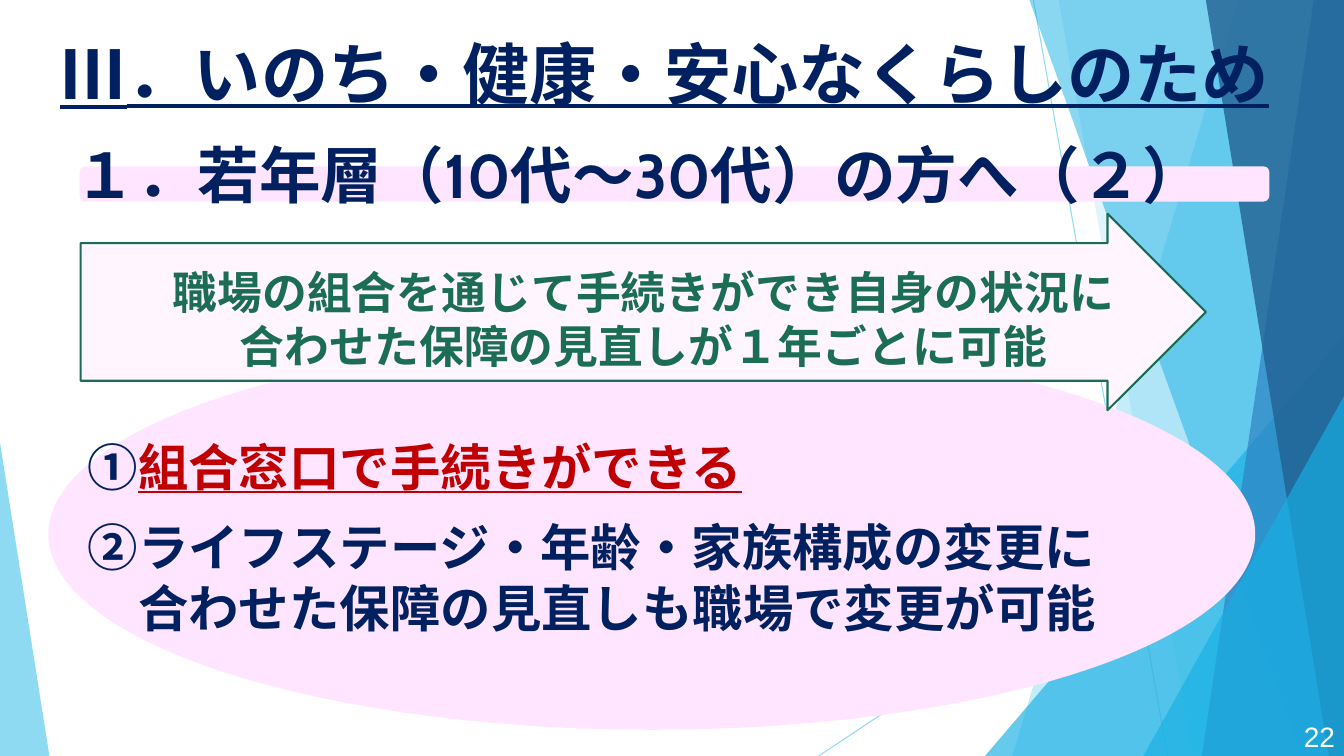
"""Builds the slide on benefit procedures for people from their teens to thirties."""
from lxml.etree import SubElement
from pptx import Presentation
from pptx.dml.color import RGBColor
from pptx.enum.shapes import MSO_CONNECTOR as Connector, MSO_SHAPE as Shape
from pptx.enum.text import MSO_ANCHOR as Anchor, MSO_AUTO_SIZE as AutoSize, PP_ALIGN as Align
from pptx.oxml.ns import qn
from pptx.util import Inches, Pt

NAVY = RGBColor(0x00, 0x20, 0x60)
RED = RGBColor(0xC0, 0x00, 0x00)
GREEN = RGBColor(0x1B, 0x6E, 0x53)
WHITE = RGBColor(0xFF, 0xFF, 0xFF)
PINK = RGBColor(0xFF, 0xE5, 0xFF)
PALE_PINK = RGBColor(0xFF, 0xF5, 0xFF)
SKY = RGBColor(0x5F, 0xCB, 0xEF)
CYAN = RGBColor(0x17, 0xB0, 0xE4)
BLUE = RGBColor(0x2E, 0x83, 0xC3)
DEEP_BLUE = RGBColor(0x22, 0x62, 0x92)

WIDTH, HEIGHT = 13.33, 7.5

HEADING = dict(name="Cabin", size=Pt(44), bold=True)
TITLE = dict(name="Cabin", size=Pt(48), bold=True, underline=True)
POINT = dict(name="Cabin", size=Pt(36), bold=True, underline=False)
MESSAGE = dict(name="Cabin", size=Pt(32), bold=True)
NUMBER = dict(name="Arial", size=Pt(20))


def set_alpha(element, percent):
    for color in element.iter(qn("a:srgbClr")):
        SubElement(color, qn("a:alpha"), val=str(percent * 1000))


def paint(shape, color, alpha=100, outline=None):
    shape.shadow.inherit = False
    shape.fill.solid()
    shape.fill.fore_color.rgb = color
    if alpha < 100:
        set_alpha(shape.element, alpha)
    if outline:
        shape.line.color.rgb = outline
        shape.line.width = Pt(1.5)
    else:
        shape.line.fill.background()


def add_preset(slide, kind, box, color, adjustments=(), **options):
    shape = slide.shapes.add_shape(kind, *map(Inches, box))
    for index, value in enumerate(adjustments):
        shape.adjustments[index] = value
    paint(shape, color, **options)


def add_facet(slide, top_x, bottom_x, color, alpha):
    corners = [(top_x, 0), (WIDTH, 0), (WIDTH, HEIGHT), (bottom_x, HEIGHT)]
    points = [(Inches(x), Inches(y)) for x, y in corners]
    builder = slide.shapes.build_freeform(*points[0])
    builder.add_line_segments(points[1:])
    paint(builder.convert_to_shape(), color, alpha)


def add_hairline(slide, *ends):
    line = slide.shapes.add_connector(Connector.STRAIGHT, *map(Inches, ends))
    line.line.color.rgb = SKY
    line.line.width = Pt(0.75)
    set_alpha(line.element, 70)
    SubElement(line.element.spPr, qn("a:effectLst"))


def add_run(paragraph, text, style, color):
    run = paragraph.add_run()
    run.text = text
    for attribute, value in style.items():
        setattr(run.font, attribute, value)
    run.font.color.rgb = color
    SubElement(run.font._element, qn("a:ea"), typeface=style["name"])


def write(shape, box, paragraphs, align=Align.LEFT, anchor=Anchor.TOP):
    shape.left, shape.top, shape.width, shape.height = map(Inches, box)
    frame = shape.text_frame
    frame.word_wrap = True
    frame.auto_size = AutoSize.NONE
    frame.vertical_anchor = anchor
    for index, runs in enumerate(paragraphs):
        paragraph = frame.add_paragraph() if index else frame.paragraphs[0]
        paragraph.alignment = align
        paragraph.space_before = Pt(0)
        for run in runs:
            add_run(paragraph, *run)
    return frame


def add_text(slide, box, paragraphs, **options):
    write(slide.shapes.add_textbox(*map(Inches, box)), box, paragraphs, **options)


def bring_to_front(shape):
    shape.element.getparent().append(shape.element)


def add_background(slide):
    add_hairline(slide, 10.25, 0, 11.58, HEIGHT)
    add_hairline(slide, WIDTH, 4.03, 8.12, HEIGHT)
    add_facet(slide, 12.28, 10.04, SKY, 36)
    add_facet(slide, 10.5, 11.83, SKY, 20)
    add_preset(slide, Shape.ISOSCELES_TRIANGLE, (9.77, 3.33, 3.56, 4.17), CYAN, [1], alpha=66)
    add_facet(slide, 10.21, 12.91, CYAN, 50)
    add_facet(slide, 13.03, 11.92, BLUE, 70)
    add_facet(slide, 11.96, 13.18, DEEP_BLUE, 80)
    add_preset(slide, Shape.ISOSCELES_TRIANGLE, (11.34, 3.93, 1.99, 3.57), CYAN, [1], alpha=66)
    add_preset(slide, Shape.ISOSCELES_TRIANGLE, (0, 4.39, 0.49, 3.11), SKY, [0], alpha=70)


def fill_points(body):
    frame = write(body, (0.77, 4.28, 12.27, 2.12), [
        [("①", POINT, NAVY), ("組合窓口で手続きができる", {**POINT, "underline": True}, RED)],
        [("②ライフステージ・年齢・家族構成の変更に", POINT, NAVY)],
        [("合わせた保障の見直しも職場で変更が可能", POINT, NAVY)],
    ])
    for paragraph, indent in zip(frame.paragraphs, (0, 0, 0.5)):
        properties = paragraph._p.get_or_add_pPr()
        properties.set("marL", str(Inches(indent)))
        properties.set("indent", "0")
        SubElement(properties, qn("a:buNone"))
    frame.paragraphs[1].space_before = Pt(14)
    bring_to_front(body)


def fill_title(title):
    write(title, (0.49, 0.27, 12.45, 0.87), [[
        ("Ⅲ", {**TITLE, "name": "Arial"}, NAVY),
        ("．いのち・健康・安心なくらしのため", TITLE, NAVY),
    ]])
    bring_to_front(title)


def main():
    presentation = Presentation()
    presentation.slide_width = Inches(WIDTH)
    presentation.slide_height = Inches(HEIGHT)
    slide = presentation.slides.add_slide(presentation.slide_layouts[1])

    add_background(slide)
    add_preset(slide, Shape.ROUNDED_RECTANGLE, (0.79, 1.65, 11.8, 0.35), PINK)
    add_text(slide, (0.64, 1.31, 12.69, 0.84),
             [[("１．若年層（10代～30代）の方へ（２）", HEADING, NAVY)]])
    add_preset(slide, Shape.OVAL, (0.48, 3.36, 11.97, 3.88), PINK)
    add_preset(slide, Shape.RIGHT_ARROW, (0.8, 2.12, 11.16, 1.95), PALE_PINK,
               [0.7, 0.5], outline=GREEN)
    add_text(slide, (12.59, 7.1, 0.75, 0.4), [[("22", NUMBER, WHITE)]],
             align=Align.RIGHT, anchor=Anchor.MIDDLE)
    fill_points(slide.placeholders[1])
    add_text(slide, (0.82, 2.58, 11.13, 1.18), [
        [("職場の組合を通じて手続きができ自身の状況に", MESSAGE, GREEN)],
        [("合わせた保障の見直しが１年ごとに可能", MESSAGE, GREEN)],
    ], align=Align.CENTER)
    fill_title(slide.shapes.title)
    presentation.save("out.pptx")


if __name__ == "__main__":
    main()
